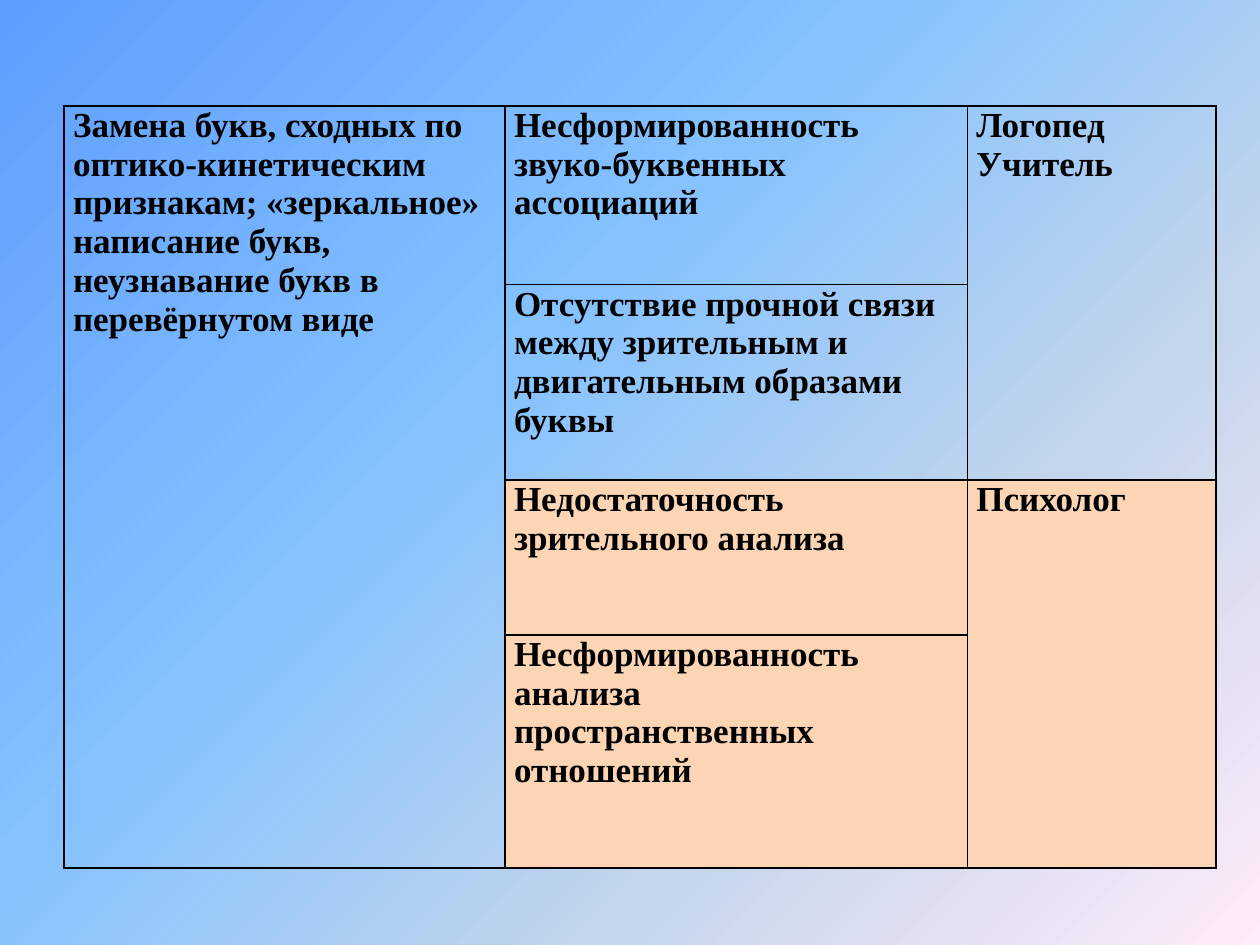
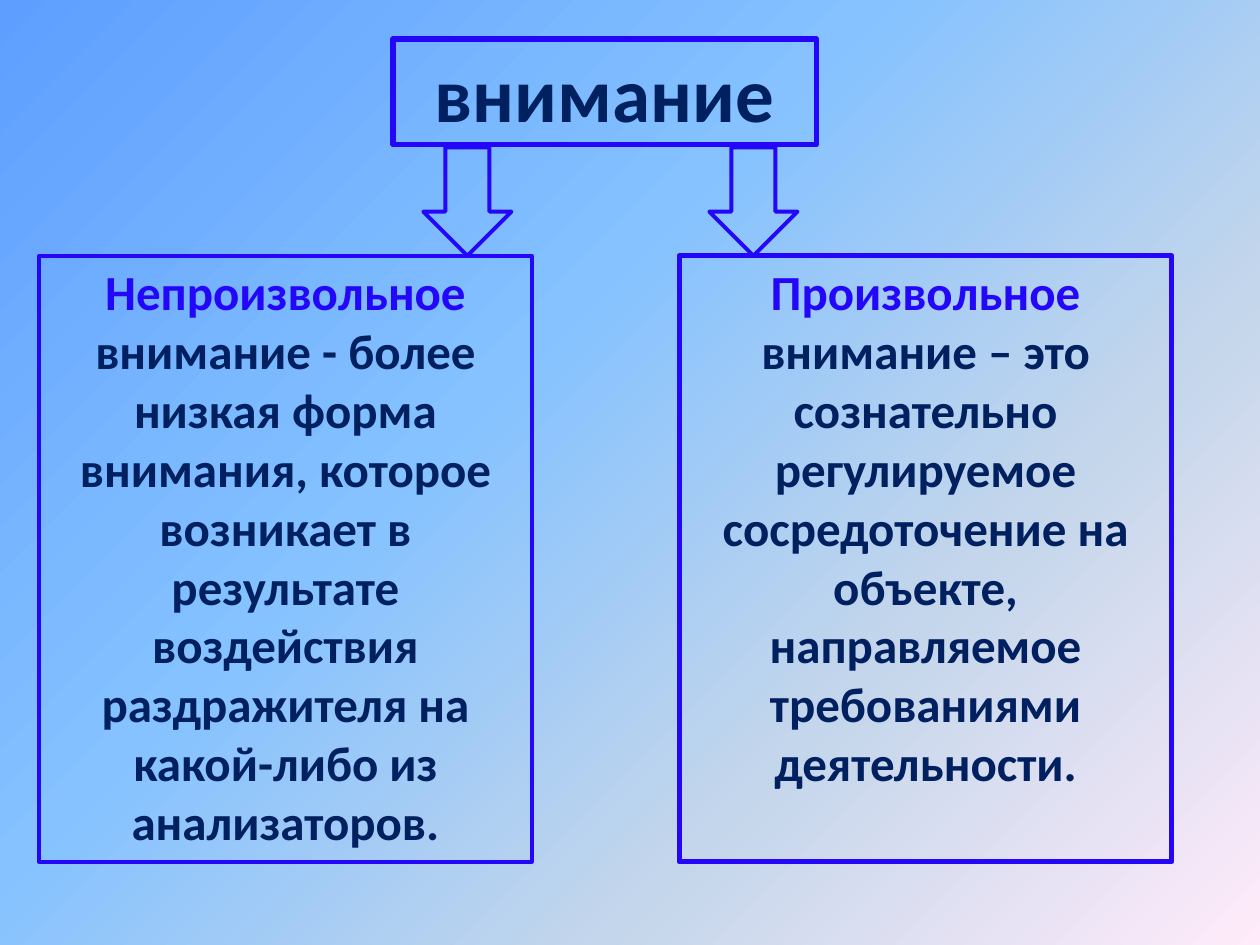
from lxml.etree import SubElement
from pptx import Presentation
from pptx.dml.color import RGBColor
from pptx.enum.shapes import MSO_SHAPE
from pptx.enum.text import MSO_ANCHOR, MSO_AUTO_SIZE, PP_ALIGN
from pptx.oxml.ns import qn
from pptx.util import Inches, Pt

COLORS = {
    "border": "000000",
    "peach": "FCD5B5",
    "outline": "2407F9",
    "navy": "002060",
}
BACKDROP = [(0, "5E9EFF"), (40, "85C2FF"), (70, "C4D6EB"), (100, "FFEBFA")]
CELL_FORMAT = {
    "margin_left": Inches(0.07),
    "margin_right": Inches(0.07),
    "margin_top": 0,
    "margin_bottom": 0,
    "vertical_anchor": MSO_ANCHOR.TOP,
}
FRAME_FORMAT = {
    "word_wrap": True,
    "vertical_anchor": MSO_ANCHOR.TOP,
    "auto_size": MSO_AUTO_SIZE.SHAPE_TO_FIT_TEXT,
}
TABLE_FONT = {"name": "Times New Roman", "size": Pt(20), "bold": True}
HEADING_FONT = {"name": "Calibri", "size": Pt(44), "bold": True}
BODY_FONT = {"name": "Calibri", "size": Pt(28), "bold": True}


def apply(target, values):
    for name, value in values.items():
        setattr(target, name, value)


class Deck:
    def __init__(self):
        self.presentation = Presentation()
        self.presentation.slide_width = Inches(10)
        self.presentation.slide_height = Inches(7.5)
        self.slide = None

    def color(self, name):
        return RGBColor.from_string(COLORS[name])

    def new_slide(self):
        self.slide = self.presentation.slides.add_slide(self.presentation.slide_layouts[6])
        fill = self.slide.background.fill
        fill.gradient()
        fill.gradient_angle = 315
        stops = self.slide.element.find(".//" + qn("a:gsLst"))
        for stop in list(stops):
            stops.remove(stop)
        for percent, shade in BACKDROP:
            stop = SubElement(stops, qn("a:gs"), pos=str(percent * 1000))
            SubElement(stop, qn("a:srgbClr"), val=shade)

    def add_text(self, paragraph, text, font, color):
        run = paragraph.add_run()
        run.text = text
        apply(run.font, font)
        run.font.color.rgb = self.color(color)

    def border(self, cell):
        properties = cell._tc.get_or_add_tcPr()
        for side in ("a:lnL", "a:lnR", "a:lnT", "a:lnB"):
            edge = SubElement(properties, qn(side), w=str(Pt(1)))
            solid = SubElement(edge, qn("a:solidFill"))
            SubElement(solid, qn("a:srgbClr"), val=COLORS["border"])

    def table(self, left, top, widths, heights, entries, merges, filled):
        table = self.slide.shapes.add_table(
            len(heights), len(widths), Inches(left), Inches(top),
            Inches(sum(widths)), Inches(sum(heights))).table
        apply(table, {"first_row": False, "horz_banding": False})
        for column, width in zip(table.columns, widths):
            column.width = Inches(width)
        for row, height in zip(table.rows, heights):
            row.height = Inches(height)
        for cell in table.iter_cells():
            apply(cell, CELL_FORMAT)
            self.border(cell)
            cell.fill.background()
        for row, column in filled:
            fill = table.cell(row, column).fill
            fill.solid()
            fill.fore_color.rgb = self.color("peach")
        for start, end in merges:
            table.cell(*start).merge(table.cell(*end))
        for position, lines in entries.items():
            frame = table.cell(*position).text_frame
            for index, line in enumerate(lines):
                paragraph = frame.add_paragraph() if index else frame.paragraphs[0]
                self.add_text(paragraph, line, TABLE_FONT, "border")

    def outlined(self, kind, left, top, width, height, weight):
        shape = self.slide.shapes.add_shape(
            kind, Inches(left), Inches(top), Inches(width), Inches(height))
        shape.shadow.inherit = False
        shape.fill.background()
        shape.line.color.rgb = self.color("outline")
        shape.line.width = Pt(weight)
        return shape

    def box(self, left, top, width, height, weight, font, parts):
        frame = self.outlined(MSO_SHAPE.RECTANGLE, left, top, width, height, weight).text_frame
        apply(frame, FRAME_FORMAT)
        paragraph = frame.paragraphs[0]
        paragraph.alignment = PP_ALIGN.CENTER
        for text, color in parts:
            self.add_text(paragraph, text, font, color)

    def arrow(self, left, top, width, height):
        self.outlined(MSO_SHAPE.DOWN_ARROW, left, top, width, height, 2.25)


def errors_slide(deck):
    deck.new_slide()
    entries = {
        (0, 0): ["Замена букв, сходных по оптико-кинетическим признакам; «зеркальное» "
                 "написание букв, неузнавание букв в перевёрнутом виде"],
        (0, 1): ["Несформированность звуко-буквенных ассоциаций"],
        (0, 2): ["Логопед", "Учитель"],
        (1, 1): ["Отсутствие прочной связи между зрительным и двигательным образами буквы"],
        (2, 1): ["Недостаточность зрительного анализа"],
        (2, 2): ["Психолог"],
        (3, 1): ["Несформированность анализа", "пространственных отношений"],
    }
    merges = [((0, 0), (3, 0)), ((0, 2), (1, 2)), ((2, 2), (3, 2))]
    filled = [(row, column) for row in (2, 3) for column in (1, 2)]
    deck.table(0.51, 0.84, [3.5, 3.67, 1.97], [1.42, 1.55, 1.23, 1.85],
               entries, merges, filled)


def attention_slide(deck):
    deck.new_slide()
    kinds = [
        (0.31, 2.25, "Непроизвольное",
         " внимание - более низкая форма внимания, которое возникает в результате "
         "воздействия раздражителя на какой-либо из анализаторов."),
        (5.39, 3, "Произвольное",
         " внимание – это сознательно регулируемое сосредоточение на объекте, "
         "направляемое требованиями деятельности."),
    ]
    for left, weight, term, definition in kinds:
        deck.box(left, 2.03, 3.91, 4.81, weight, BODY_FONT,
                 [(term, "outline"), (definition, "navy")])
    deck.box(3.12, 0.31, 3.36, 0.84, 3, HEADING_FONT, [("внимание", "navy")])
    for left in (3.36, 5.63):
        deck.arrow(left, 1.17, 0.7, 0.86)


def main():
    deck = Deck()
    errors_slide(deck)
    attention_slide(deck)
    deck.presentation.save("out.pptx")


if __name__ == "__main__":
    main()
